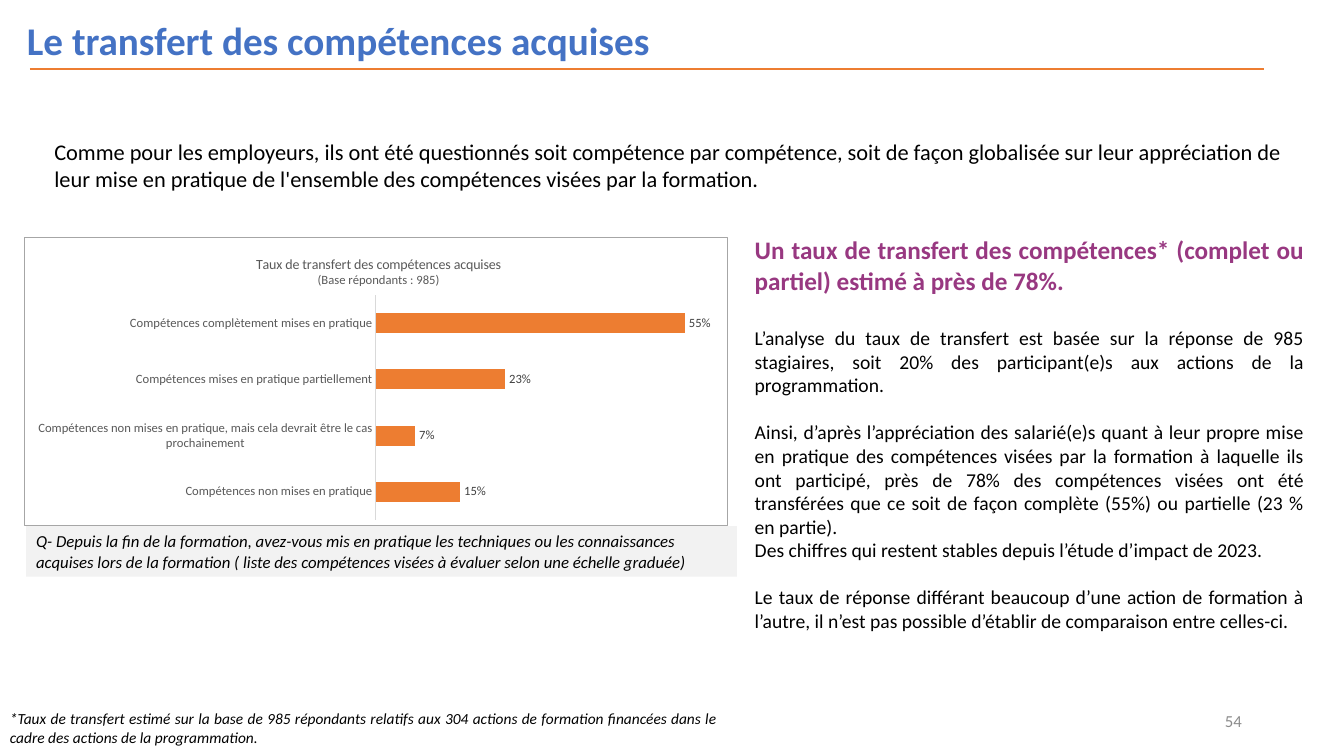
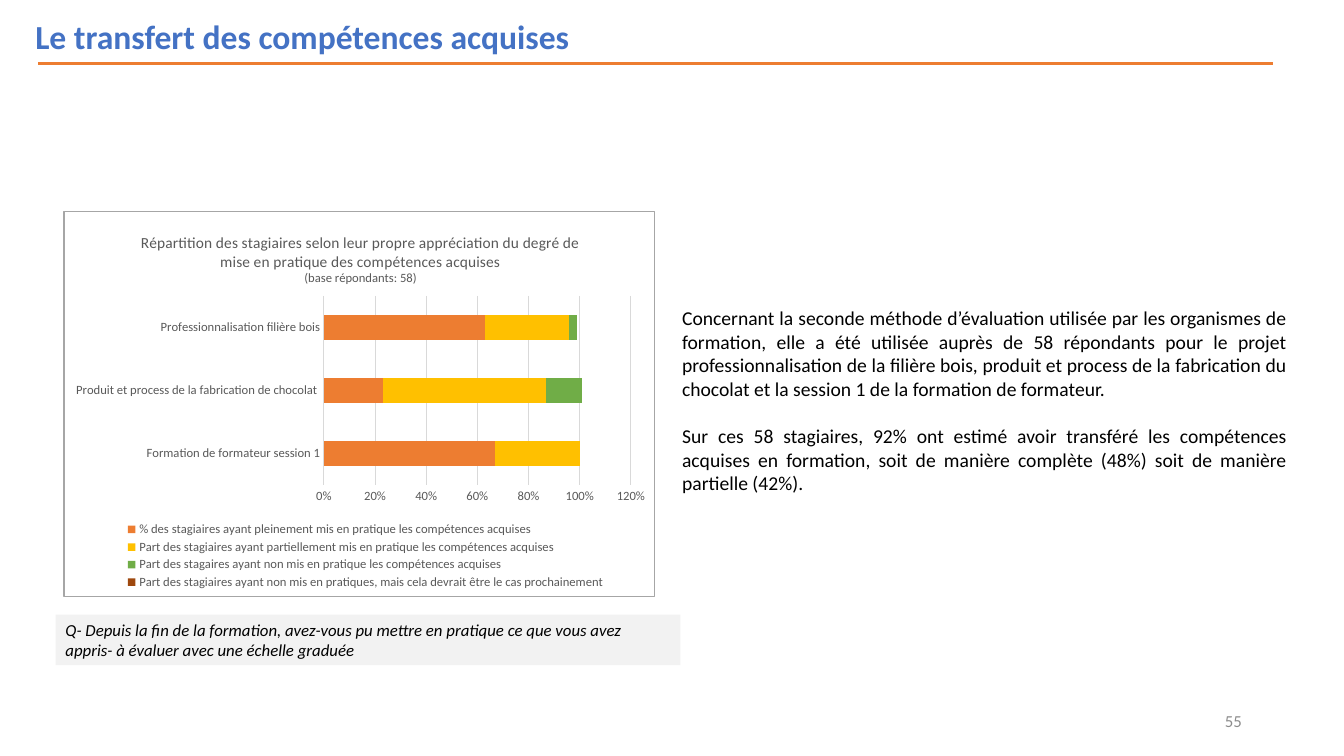
from lxml import etree
from pptx import Presentation
from pptx.chart import data as cd
from pptx.dml.color import RGBColor
from pptx.enum import chart as ch, shapes, text as tx
from pptx.oxml import ns
from pptx.util import Cm, Pt

FONT = "Calibri"
BLUE, ORANGE, PURPLE, BLACK = "4472C4", "ED7D31", "983881", "000000"
GRAY, PALE, DARK, RULE = "595959", "F2F2F2", "404040", "D9D9D9"
HEAD = "Le transfert des compétences acquises"
LEFT, JUST, RIGHT = tx.PP_ALIGN.LEFT, tx.PP_ALIGN.JUSTIFY, tx.PP_ALIGN.RIGHT
STACK, BAR = ch.XL_CHART_TYPE.BAR_STACKED, ch.XL_CHART_TYPE.BAR_CLUSTERED

SLIDES = [
    {
        "page": "54",
        "head": (0.43, 28, 1.73),
        "texts": [
            ((1.12, 3.35, 31.5, 1.63), LEFT, [
                ("Comme pour les employeurs, ils ont été questionnés soit compétence par compétence, soit de façon globalisée sur leur appréciation de leur mise en pratique de l'ensemble des compétences visées par la formation.", 0, {"size": 16})]),
            ((18.77, 5.79, 14.35, 10.52), JUST, [
                ("Un taux de transfert des compétences* (complet ou partiel) estimé à près de 78%.", 0,
                 {"size": 18, "color": PURPLE, "bold": True}),
                ("L’analyse du taux de transfert est basée sur la réponse de 985 stagiaires, soit 20% des participant(e)s aux actions de la programmation.", 22, {}),
                ("Ainsi, d’après l’appréciation des salarié(e)s quant à leur propre mise en pratique des compétences visées par la formation à laquelle ils ont participé, près de 78% des compétences visées ont été transférées que ce soit de façon complète (55%) ou partielle (23 % en partie).", 17, {}),
                ("Des chiffres qui restent stables depuis l’étude d’impact de 2023.", 0, {}),
                ("Le taux de réponse différant beaucoup d’une action de formation à l’autre, il n’est pas possible d’établir de comparaison entre celles-ci.", 17, {})]),
            ((0, 17.75, 18.34, 1.19), JUST, [
                ("*Taux de transfert estimé sur la base de 985 répondants relatifs aux 304 actions de formation financées dans le cadre des actions de la programmation.", 0, {"size": 11, "italic": True})]),
        ],
        "ask": ((0.66, 13.26, 17.91, 1.27),
                "Q- Depuis la fin de la formation, avez-vous mis en pratique les techniques ou les connaissances acquises lors de la formation ( liste des compétences visées à évaluer selon une échelle graduée)"),
        "chart": {
            "kind": BAR, "box": (0.61, 5.97, 17.73, 7.29), "gap": 182, "top": 0.6,
            "title": [("Taux de transfert des compétences acquises", 10),
                      ("(Base répondants : 985)", 9)],
            "spot": (0.325, 0.05), "plot": (0.5, 0.2, 0.48, 0.78),
            "cats": ["Compétences non mises en pratique",
                     "Compétences non mises en pratique, mais cela devrait être le cas prochainement",
                     "Compétences mises en pratique partiellement",
                     "Compétences complètement mises en pratique"],
            "rows": [("Taux de transfert", ORANGE, (0.15, 0.07, 0.23, 0.55))],
        },
    },
    {
        "page": "55",
        "head": (0.64, 24, 1.6),
        "texts": [
            ((16.94, 7.59, 15.75, 5.05), JUST, [
                ("Concernant la seconde méthode d’évaluation utilisée par les organismes de formation, elle a été utilisée auprès de 58 répondants pour le projet professionnalisation de la filière bois, produit et process de la fabrication du chocolat et la session 1 de la formation de formateur.", 0, {}),
                ("Sur ces 58 stagiaires, 92% ont estimé avoir transféré les compétences acquises en formation, soit de manière complète (48%) soit de manière partielle (42%).", 17, {})]),
        ],
        "ask": ((1.4, 15.49, 15.75, 1.27),
                "Q- Depuis la fin de la formation, avez-vous pu mettre en pratique ce que vous avez appris- à évaluer avec une échelle graduée"),
        "chart": {
            "kind": STACK, "box": (1.6, 5.31, 14.91, 9.73), "gap": 150, "top": 1.2,
            "title": [("Répartition des stagiaires selon leur propre appréciation du degré de mise en pratique des compétences acquises", 11),
                      ("(base répondants: 58)", 9)],
            "spot": (0.125, 0.045), "plot": (0.44, 0.22, 0.52, 0.49),
            "legend": (0.09, 0.8, 0.84, 0.19),
            "cats": ["Formation de formateur session 1",
                     "Produit et process de la fabrication de chocolat ",
                     "Professionnalisation filière bois"],
            "rows": [
                ("% des stagiaires ayant pleinement mis en pratique les compétences acquises", ORANGE, (0.67, 0.23, 0.63)),
                ("Part des stagiaires ayant partiellement mis en pratique les compétences acquises", "FFC000", (0.33, 0.64, 0.33)),
                ("Part des stagaires ayant non mis en pratique les compétences acquises", "70AD47", (0, 0.14, 0.03)),
                ("Part des stagiaires ayant non mis en pratiques, mais cela devrait être le cas prochainement", "9E480E", (0, 0, 0)),
            ],
        },
    },
]


def rgb(code):
    return RGBColor.from_string(code)


def cms(box):
    return [Cm(n) for n in box]


def style(font, size=14, color=BLACK, bold=False, italic=False):
    font.name, font.size = FONT, Pt(size)
    font.bold, font.italic = bold, italic
    font.color.rgb = rgb(color)


def fill(frame, paras, align=LEFT, anchor=tx.MSO_ANCHOR.TOP):
    frame.word_wrap = True
    frame.vertical_anchor = anchor
    for i, (words, gap, look) in enumerate(paras):
        para = frame.add_paragraph() if i else frame.paragraphs[0]
        para.text, para.alignment = words, align
        para.space_before = Pt(gap)
        style(para.font, **look)


def write(slide, box, paras, *rest):
    fill(slide.shapes.add_textbox(*cms(box)).text_frame, paras, *rest)


def header(slide, left, size, base):
    write(slide, (left, 0.28, 22.38, 1.4),
          [(HEAD, 0, {"size": size, "color": BLUE, "bold": True})])
    start = left + 0.32
    rule = slide.shapes.add_connector(
        shapes.MSO_CONNECTOR.STRAIGHT, *cms((start, base, start + 31.11, base)))
    rule.line.color.rgb, rule.line.width = rgb(ORANGE), Pt(1.5)
    etree.SubElement(rule.element.spPr, ns.qn("a:effectLst"))


def footer(slide, page):
    write(slide, (23.93, 17.65, 7.62, 1.02),
          [(page, 0, {"size": 12, "color": "8C8C8C"})], RIGHT, tx.MSO_ANCHOR.MIDDLE)


def question(slide, box, words):
    band = slide.shapes.add_shape(shapes.MSO_SHAPE.RECTANGLE, *cms(box))
    band.shadow.inherit = False
    band.fill.solid()
    band.fill.fore_color.rgb = rgb(PALE)
    band.line.fill.background()
    fill(band.text_frame, [(words, 0, {"size": 12, "italic": True})])


def place(node, index, spot, inner=False):
    for old in node.findall(ns.qn("c:layout")):
        node.remove(old)
    lay = etree.Element(ns.qn("c:layout"))
    man = etree.SubElement(lay, ns.qn("c:manualLayout"))
    tags = [("layoutTarget", "inner")] if inner else []
    tags += [("xMode", "edge"), ("yMode", "edge")]
    tags += zip("xywh", map(str, spot))
    for tag, val in tags:
        etree.SubElement(man, ns.qn("c:" + tag)).set("val", val)
    node.insert(index, lay)


def border(chart):
    props = etree.Element(ns.qn("c:spPr"))
    back = etree.SubElement(props, ns.qn("a:solidFill"))
    edge = etree.SubElement(props, ns.qn("a:ln"), w="9525")
    line = etree.SubElement(edge, ns.qn("a:solidFill"))
    for node, code in ((back, "FFFFFF"), (line, "A6A6A6")):
        etree.SubElement(node, ns.qn("a:srgbClr"), val=code)
    chart.element.find(ns.qn("c:chart")).addnext(props)


def thin(line):
    line.color.rgb, line.width = rgb(RULE), Pt(0.75)


def axes(chart, top, shown):
    cat, val = chart.category_axis, chart.value_axis
    for axis in (cat, val):
        axis.major_tick_mark = axis.minor_tick_mark = ch.XL_TICK_MARK.NONE
        style(axis.tick_labels.font, 9, GRAY)
    thin(cat.format.line)
    val.minimum_scale, val.maximum_scale, val.major_unit = 0, top, top / 6
    val.tick_labels.number_format = "0%"
    val.tick_labels.number_format_is_linked = False
    val.format.line.fill.background()
    val.has_major_gridlines = val.visible = shown
    if shown:
        thin(val.major_gridlines.format.line)


def graph(slide, kind, box, gap, top, title, spot, plot, cats, rows, legend=None):
    data = cd.CategoryChartData(number_format="0%")
    data.categories = cats
    for name, _, vals in rows:
        data.add_series(name, vals)
    chart = slide.shapes.add_chart(kind, *cms(box), data).chart
    style(chart.font, 10)
    border(chart)
    axes(chart, top, kind == STACK)

    chart.has_title = True
    fill(chart.chart_title.text_frame,
         [(words, 0, {"size": size, "color": GRAY}) for words, size in title],
         tx.PP_ALIGN.CENTER)
    place(chart.element.find(".//" + ns.qn("c:title")), 1, spot)
    place(chart.element.find(".//" + ns.qn("c:plotArea")), 0, plot, True)

    bars = chart.plots[0]
    bars.gap_width, bars.vary_by_categories = gap, False
    if kind == STACK:
        bars.overlap = 100
    for row, (_, color, _) in zip(bars.series, rows):
        row.format.fill.solid()
        row.format.fill.fore_color.rgb = rgb(color)

    chart.has_legend = legend is not None
    if legend:
        chart.legend.position = ch.XL_LEGEND_POSITION.BOTTOM
        chart.legend.include_in_layout = False
        style(chart.legend.font, 9, GRAY)
        place(chart.element.find(".//" + ns.qn("c:legend")), 1, legend)
    else:
        bars.has_data_labels = True
        tags = bars.data_labels
        tags.show_value = True
        tags.position = ch.XL_LABEL_POSITION.OUTSIDE_END
        tags.number_format, tags.number_format_is_linked = "0%", False
        style(tags.font, 9, DARK)


def main():
    deck = Presentation()
    deck.slide_width, deck.slide_height = Cm(33.87), Cm(19.05)
    for page in SLIDES:
        slide = deck.slides.add_slide(deck.slide_layouts[6])
        header(slide, *page["head"])
        footer(slide, page["page"])
        for box, align, paras in page["texts"]:
            write(slide, box, paras, align)
        question(slide, *page["ask"])
        graph(slide, **page["chart"])
    deck.save("out.pptx")


if __name__ == "__main__":
    main()
